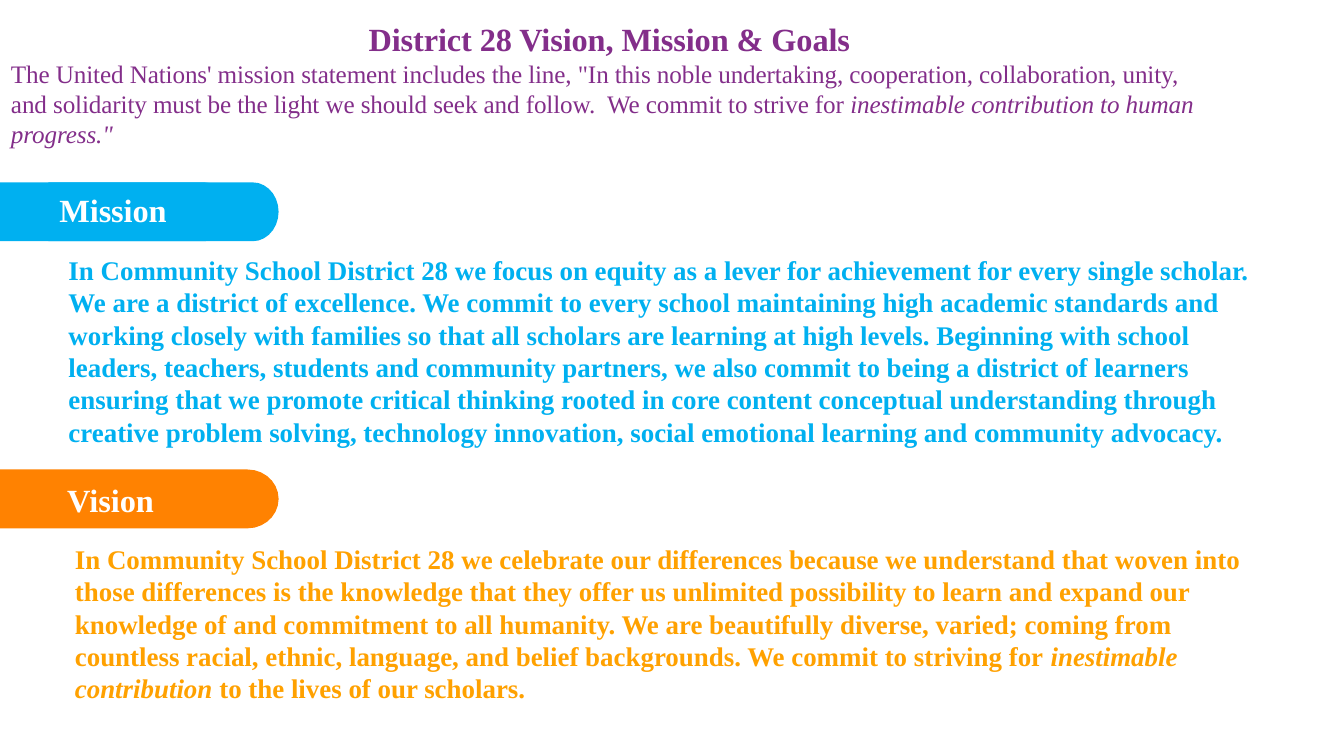
from math import cos, pi, sin

from pptx import Presentation
from pptx.dml.color import RGBColor
from pptx.enum.text import MSO_AUTO_SIZE, PP_ALIGN
from pptx.util import Inches, Pt

GROW = MSO_AUTO_SIZE.SHAPE_TO_FIT_TEXT
LEFT, CENTER = PP_ALIGN.LEFT, PP_ALIGN.CENTER
WHITE, BLUE, ORANGE = "FFFFFF", "00B0F0", "FF8201"
GOLD, PURPLE = "FFA100", "832E8A"


def color(code):
    return RGBColor.from_string(code)


class Page:
    font = "Times New Roman"
    tab_high = 0.91

    def __init__(self, slide):
        self.slide = slide

    def tab(self, left, top, width, curve, fill):
        """Bar with a square left end and a round right end."""
        half = self.tab_high / 2
        base = left + width - curve
        steps = 14
        turns = [pi * i / steps for i in range(steps + 1)]
        arc = [(Inches(base + curve * sin(t)),
                Inches(top + half - half * cos(t))) for t in turns]
        build = self.slide.shapes.build_freeform(Inches(left), Inches(top))
        build.add_line_segments(
            arc + [(Inches(left), Inches(top + self.tab_high))], close=True)
        shape = build.convert_to_shape()
        shape.shadow.inherit = False
        shape.fill.solid()
        shape.fill.fore_color.rgb = color(fill)
        shape.line.fill.background()

    def box(self, left, top, width, height, inset=(0, 0.01, 0, 0)):
        shape = self.slide.shapes.add_textbox(
            Inches(left), Inches(top), Inches(width), Inches(height))
        frame = shape.text_frame
        frame.word_wrap = True
        frame.auto_size = GROW
        (frame.margin_left, frame.margin_top,
         frame.margin_right, frame.margin_bottom) = map(Inches, inset)
        return frame

    def para(self, line, runs, size, tint, bold=True, align=LEFT,
             before=0, tight=False):
        """Fill a paragraph; runs are (text, italic) pairs."""
        line.alignment = align
        line.space_before = Pt(before)
        for text, slant in runs:
            run = line.add_run()
            run.text = text
            font = run.font
            font.name, font.size = self.font, Pt(size)
            font.bold, font.italic = bold, slant
            font.color.rgb = color(tint)
            if tight:
                run._r.get_or_add_rPr().set("spc", "-10")


deck = Presentation()
deck.slide_width, deck.slide_height = Inches(20.79), Inches(11.69)
page = Page(deck.slides.add_slide(deck.slide_layouts[6]))

# Mission
for left in (0, 0.75):
    page.tab(left, 2.82, 3.56, 0.4, BLUE)
head = page.box(0.92, 2.93, 3.92, 0.62)
page.para(head.paragraphs[0], [("Mission", False)], 36, WHITE,
          before=1, tight=True)
body = page.box(1.06, 3.91, 18.83, 3.03)
page.para(body.paragraphs[0], [(
    "In Community School District 28 we focus on equity as a lever for "
    "achievement for every single scholar. We are a district of excellence. "
    "We commit to every school maintaining high academic standards and "
    "working closely with families so that all scholars are learning at high "
    "levels. Beginning with school leaders, teachers, students and community "
    "partners, we also commit to being a district of learners ensuring that "
    "we promote critical thinking rooted in core content conceptual "
    "understanding through creative problem solving, technology innovation, "
    "social emotional learning and community advocacy.", False)], 30, BLUE)

# Vision
page.tab(0, 7.26, 4.31, 0.48, ORANGE)
head = page.box(1.04, 7.41, 2.8, 0.62)
page.para(head.paragraphs[0], [("Vision", False)], 36, WHITE, before=1)
body = page.box(1.06, 8.34, 18.38, 2.63, (0.1, 0.05, 0.1, 0.05))
page.para(body.paragraphs[0], [
    ("In Community School District 28 we celebrate our differences because "
     "we understand that woven into those differences is the knowledge that "
     "they offer us unlimited possibility to learn and expand our knowledge "
     "of and commitment to all humanity. We are beautifully diverse, varied; "
     "coming from countless racial, ethnic, language, and belief "
     "backgrounds. We commit to striving for ", False),
    ("inestimable contribution", True),
    (" to the lives of our scholars.", False)], 30, GOLD)

# Title and opening statement
intro = page.box(0.17, 0.28, 18.51, 2.05)
page.para(intro.paragraphs[0], [("District 28 Vision, Mission & Goals", False)],
          36, PURPLE, align=CENTER, before=1, tight=True)
page.para(intro.add_paragraph(), [
    ("The United Nations' mission statement includes the line, \"In this "
     "noble undertaking, cooperation, collaboration, unity, and solidarity "
     "must be the light we should seek and follow.  We commit to strive "
     "for ", False),
    ("inestimable contribution to human progress.\"", True)],
    28, PURPLE, bold=False, before=1, tight=True)

deck.save("out.pptx")
